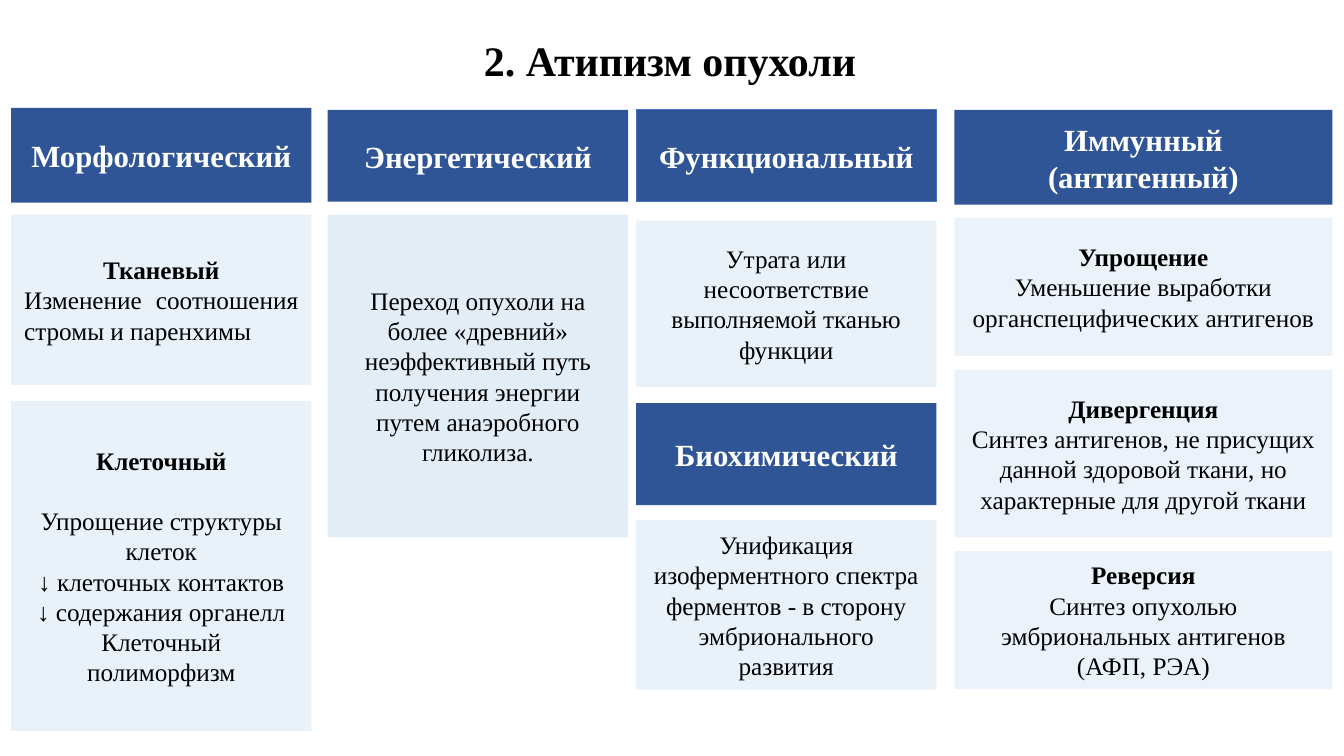
"""Build the slide on the kinds of tumour atypism."""
from lxml import etree
from pptx import Presentation
from pptx.dml.color import RGBColor
from pptx.enum import shapes, text
from pptx.oxml.ns import qn
from pptx.util import Cm, Pt

BLACK = RGBColor(0x00, 0x00, 0x00)
WHITE = RGBColor(0xFF, 0xFF, 0xFF)
NAVY = RGBColor(0x2F, 0x55, 0x97)
EDGE = RGBColor(0x44, 0x72, 0xC4)
SKY = RGBColor(0x5B, 0x9B, 0xD5)
STEEL = RGBColor(0x2E, 0x75, 0xB6)
FONT = "Times New Roman"
MARGIN = Cm(0.33)


def write(box, lines, size, color, bold_first):
    """Fill a box with centred paragraphs, the first one bold if asked."""
    frame = box.text_frame
    frame.word_wrap = True
    frame.vertical_anchor = text.MSO_ANCHOR.MIDDLE
    frame.margin_left = frame.margin_right = MARGIN
    frame.margin_top = frame.margin_bottom = MARGIN
    frame.text = "\n".join(lines)
    for index, para in enumerate(frame.paragraphs):
        para.alignment = text.PP_ALIGN.CENTER
        para.font.name = FONT
        for span in para.runs:
            span.font.name = FONT
            span.font.size = Pt(size)
            span.font.color.rgb = color
            span.font.bold = bold_first and index == 0


def add_panel(left, top, width, height, fill, opacity=100):
    """Add a borderless rectangle with the given fill."""
    box = page.shapes.add_shape(
        shapes.MSO_SHAPE.RECTANGLE, Cm(left), Cm(top), Cm(width), Cm(height))
    box.shadow.inherit = False
    box.line.fill.background()
    box.fill.solid()
    box.fill.fore_color.rgb = fill
    if opacity < 100:
        tint = box.fill._xPr.find(".//" + qn("a:srgbClr"))
        etree.SubElement(tint, qn("a:alpha")).set("val", str(opacity * 1000))
    return box


deck = Presentation()
deck.slide_width = Cm(33.87)
deck.slide_height = Cm(19.05)
page = deck.slides.add_slide(deck.slide_layouts[6])

title = page.shapes.add_textbox(Cm(1.65), Cm(0.81), Cm(30.48), Cm(1.37))
write(title, ["2. Атипизм опухоли"], 30, BLACK, True)

MORPH, ENERGY, FUNCTION, IMMUNE = (
    (0.28, 7.57), (8.26, 7.57), (16.03, 7.57), (24.05, 9.53))

headings = {}
for (left, width), top, height, name in [
    (MORPH, 2.72, 2.39, "Морфологический"),
    (ENERGY, 2.77, 2.31, "Энергетический"),
    (FUNCTION, 2.77, 2.31, "Функциональный"),
    (FUNCTION, 10.16, 2.57, "Биохимический"),
    (IMMUNE, 2.77, 2.39, "Иммунный (антигенный)"),
]:
    headings[name] = add_panel(left, top, width, height, NAVY)
    write(headings[name], [name], 22, WHITE, True)
headings["Функциональный"].line.color.rgb = EDGE
headings["Функциональный"].line.width = Pt(0.75)

details = []
for (left, width), top, height, fill, opacity, lines in [
    (MORPH, 5.41, 4.29, SKY, 13,
     ["Тканевый", "Изменение соотношения стромы и паренхимы"]),
    (MORPH, 10.11, 8.31, SKY, 13,
     ["Клеточный", "Упрощение структуры клеток", "↓ клеточных контактов",
      "↓ содержания органелл", "Клеточный полиморфизм"]),
    (ENERGY, 5.41, 8.13, STEEL, 13,
     ["Переход опухоли на более «древний» неэффективный путь "
      "получения энергии путем анаэробного гликолиза."]),
    (FUNCTION, 5.56, 4.19, SKY, 13,
     ["Утрата или несоответствие выполняемой тканью функции"]),
    (FUNCTION, 13.11, 4.27, SKY, 13,
     ["Унификация изоферментного спектра ферментов - "
      "в сторону эмбрионального развития"]),
    (IMMUNE, 5.49, 3.48, SKY, 12,
     ["Упрощение", "Уменьшение выработки органспецифических антигенов"]),
    (IMMUNE, 9.32, 4.22, SKY, 12,
     ["Дивергенция", "Синтез антигенов, не присущих данной здоровой ткани, "
      "но характерные для другой ткани"]),
    (IMMUNE, 13.89, 3.48, SKY, 12,
     ["Реверсия", "Синтез опухолью эмбриональных антигенов (АФП, РЭА)"]),
]:
    panel = add_panel(left, top, width, height, fill, opacity)
    write(panel, lines, 18, BLACK, len(lines) > 1)
    details.append(panel)

tissue, cell = details[:2]
tissue.text_frame.paragraphs[1].alignment = text.PP_ALIGN.JUSTIFY
cell.text_frame.paragraphs[0].space_after = Pt(21.5)

deck.save("out.pptx")
